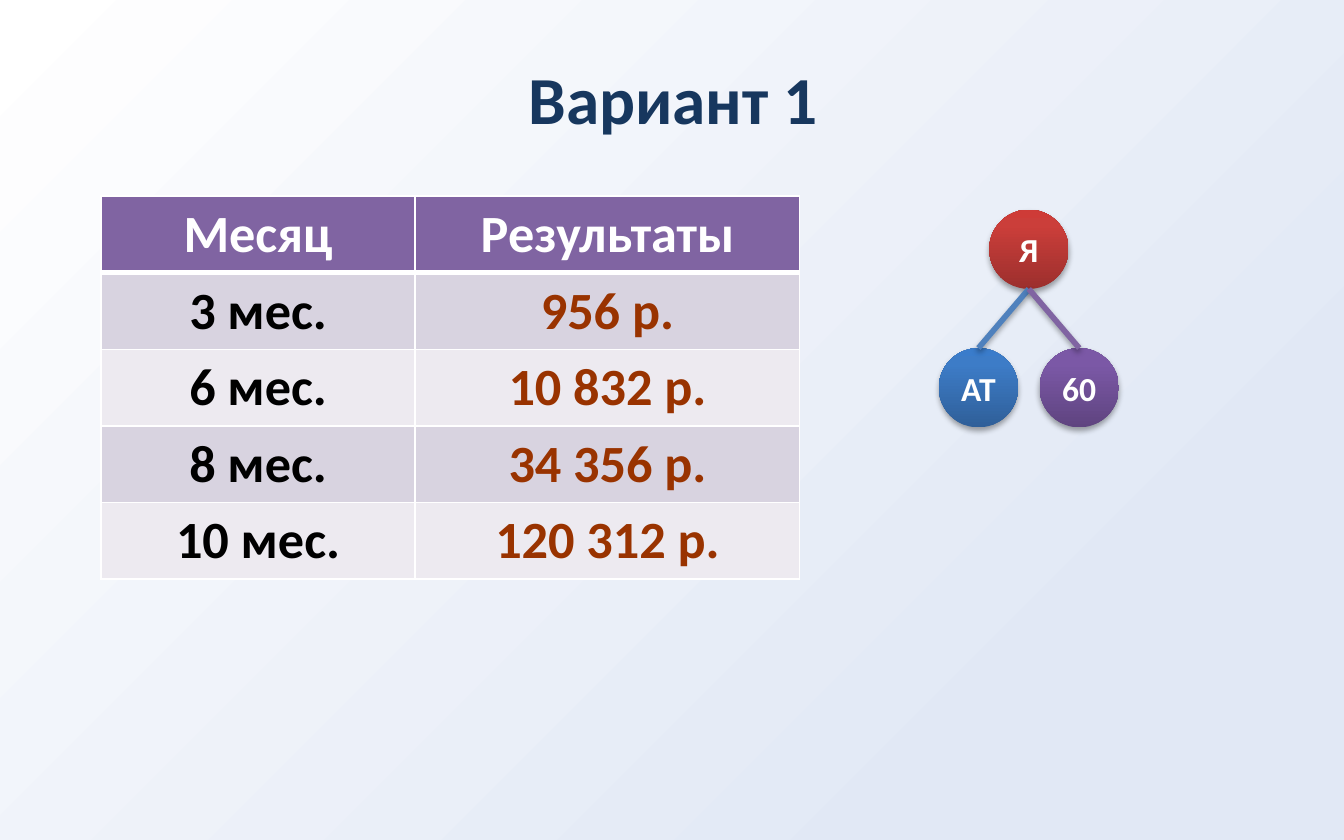
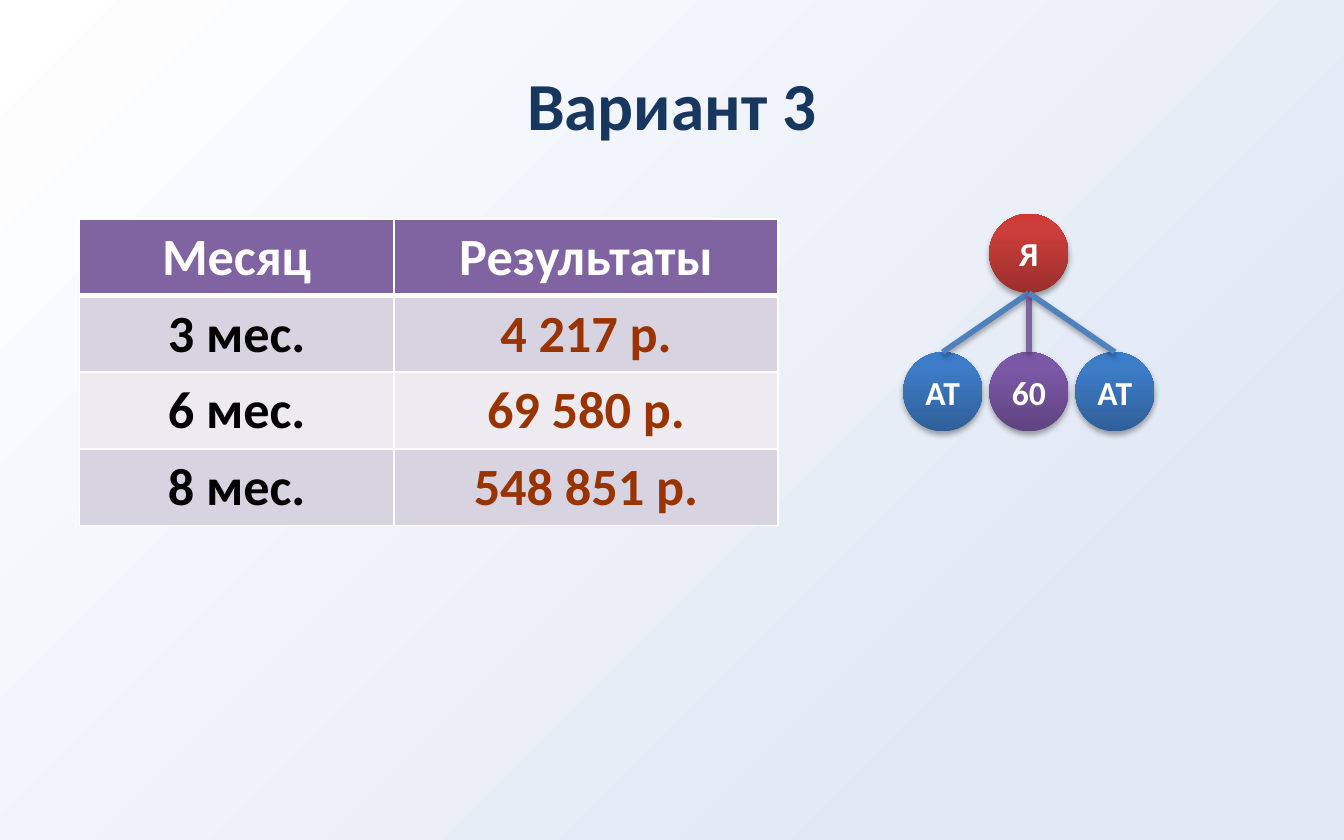
from dataclasses import dataclass

from lxml.etree import SubElement
from pptx import Presentation
from pptx.dml.color import RGBColor
from pptx.enum.shapes import MSO_CONNECTOR, MSO_SHAPE
from pptx.enum.text import MSO_ANCHOR, PP_ALIGN
from pptx.oxml.ns import qn
from pptx.util import Inches, Pt

FONT = "Calibri"
WHITE = RGBColor(0xFF, 0xFF, 0xFF)
BLACK = RGBColor(0x00, 0x00, 0x00)
NAVY = RGBColor(0x17, 0x37, 0x5E)
PALE_BLUE = RGBColor(0xE1, 0xE8, 0xF5)
BLUE = RGBColor(0x4F, 0x81, 0xBD)
PURPLE = RGBColor(0x80, 0x64, 0xA2)
RUST = RGBColor(0x99, 0x33, 0x00)
BANDS = (RGBColor(0xD8, 0xD3, 0xE0), RGBColor(0xED, 0xEA, 0xF0))
RED_SHADES = (RGBColor(0x9C, 0x2F, 0x2D), RGBColor(0xCB, 0x3E, 0x3A), RGBColor(0xCE, 0x3B, 0x37))
BLUE_SHADES = (RGBColor(0x2F, 0x5F, 0x99), RGBColor(0x3D, 0x7C, 0xC7), RGBColor(0x3A, 0x7C, 0xCB))
PURPLE_SHADES = (RGBColor(0x5F, 0x44, 0x80), RGBColor(0x7B, 0x58, 0xA6), RGBColor(0x7C, 0x57, 0xA8))

HEADER = ("Месяц", "Результаты")
COLUMN_WIDTHS = (2.34, 2.86)
ROW_HEIGHT = 0.57
BALL_SIZE = 0.59
ROOT_LEFT = 7.36
LEVEL_DROP = 1.03


@dataclass(frozen=True)
class Ball:
    """A node of the referral tree and the colour of the line leading to it."""
    label: str
    shades: tuple[RGBColor, ...]
    line: RGBColor


ME = Ball("Я", RED_SHADES, WHITE)
PARTNER = Ball("АТ", BLUE_SHADES, BLUE)
SIXTY = Ball("60", PURPLE_SHADES, PURPLE)


@dataclass(frozen=True)
class Variant:
    """The content and placement of one slide."""
    title: str
    title_left: float
    title_top: float
    table_left: float
    table_top: float
    rows: tuple[tuple[str, str], ...]
    tree_top: float
    children: tuple[Ball, ...]
    child_step: float


VARIANTS = (
    Variant(
        "Вариант 1", 0.51, 0.21, 0.75, 1.46,
        (("3 мес.", "956 р."), ("6 мес.", "10 832 р."),
         ("8 мес.", "34 356 р."), ("10 мес.", "120 312 р.")),
        1.56, (PARTNER, SIXTY), 0.75,
    ),
    Variant(
        "Вариант 3", 0.5, 0.25, 0.59, 1.63,
        (("3 мес.", "4 217 р."), ("6 мес.", "69 580 р."), ("8 мес.", "548 851 р.")),
        1.59, (PARTNER, SIXTY, PARTNER), 0.64,
    ),
)


def set_gradient(fill, root, stops, angle: int) -> None:
    """Give the fill found under root the stops (percent, colour) and a clockwise angle."""
    fill.gradient()
    gradient = root.find(".//" + qn("a:gradFill"))
    stop_list = gradient.find(qn("a:gsLst"))
    for stop in list(stop_list):
        stop_list.remove(stop)
    for percent, color in stops:
        stop = SubElement(stop_list, qn("a:gs"), pos=str(percent * 1000))
        SubElement(stop, qn("a:srgbClr"), val=str(color))
    gradient.find(qn("a:lin")).set("ang", str(angle * 60000))


def add_shadow(properties) -> None:
    """Add the soft downward shadow to shape properties."""
    effects = properties.find(qn("a:effectLst"))
    if effects is None:
        effects = SubElement(properties, qn("a:effectLst"))
    shadow = SubElement(effects, qn("a:outerShdw"), blurRad=str(Pt(3.1)), dist=str(Pt(1.8)),
                        dir="5400000", rotWithShape="0")
    color = SubElement(shadow, qn("a:srgbClr"), val=str(BLACK))
    SubElement(color, qn("a:alpha"), val="35000")


def write_text(frame, text: str, size: int, color: RGBColor) -> None:
    """Write one bold centred line."""
    para = frame.paragraphs[0]
    para.alignment = PP_ALIGN.CENTER
    span = para.add_run()
    span.text = text
    span.font.name = FONT
    span.font.size = Pt(size)
    span.font.bold = True
    span.font.color.rgb = color


def add_title(page, variant: Variant) -> None:
    """Draw the slide title."""
    box = page.shapes.add_textbox(Inches(variant.title_left), Inches(variant.title_top),
                                  Inches(9), Inches(1.04))
    box.text_frame.word_wrap = True
    box.text_frame.vertical_anchor = MSO_ANCHOR.MIDDLE
    write_text(box.text_frame, variant.title, 36, NAVY)


def set_borders(cell, top: int, bottom: int) -> None:
    """Put white borders round a cell, with top and bottom widths in points."""
    properties = cell._tc.get_or_add_tcPr()
    for side, width in (("L", 1), ("R", 1), ("T", top), ("B", bottom)):
        line = SubElement(properties, qn(f"a:ln{side}"), w=str(Pt(width)))
        SubElement(SubElement(line, qn("a:solidFill")), qn("a:srgbClr"), val=str(WHITE))


def add_results(page, variant: Variant) -> None:
    """Draw the table of results by month."""
    rows = (HEADER, *variant.rows)
    table = page.shapes.add_table(
        len(rows), len(HEADER), Inches(variant.table_left), Inches(variant.table_top),
        Inches(sum(COLUMN_WIDTHS)), Inches(ROW_HEIGHT * len(rows))).table
    table.horz_banding = False
    for column, width in zip(table.columns, COLUMN_WIDTHS):
        column.width = Inches(width)
    for row_index, row in enumerate(rows):
        is_header = row_index == 0
        colors = (WHITE, WHITE) if is_header else (BLACK, RUST)
        for column_index, text in enumerate(row):
            cell = table.cell(row_index, column_index)
            set_borders(cell, 3 if row_index == 1 else 1, 3 if is_header else 1)
            cell.fill.solid()
            cell.fill.fore_color.rgb = PURPLE if is_header else BANDS[(row_index - 1) % 2]
            write_text(cell.text_frame, text, 28, colors[column_index])


def add_ball(page, ball: Ball, left: float, top: float):
    """Draw one shaded ball with its label."""
    shape = page.shapes.add_shape(MSO_SHAPE.OVAL, Inches(left), Inches(top),
                                  Inches(BALL_SIZE), Inches(BALL_SIZE))
    set_gradient(shape.fill, shape.element.spPr, zip((0, 80, 100), ball.shades), 270)
    shape.line.fill.background()
    shape.shadow.inherit = False
    add_shadow(shape.element.spPr)
    frame = shape.text_frame
    frame.margin_left = frame.margin_right = Inches(0.04)
    frame.margin_top = frame.margin_bottom = Inches(0.05)
    frame.vertical_anchor = MSO_ANCHOR.MIDDLE
    write_text(frame, ball.label, 18, WHITE)
    return shape


def add_branch(page, parent, child, color: RGBColor) -> None:
    """Draw a line from the bottom of the parent to the top of the child."""
    start_x, start_y = parent.left + parent.width // 2, parent.top + parent.height
    branch = page.shapes.add_connector(MSO_CONNECTOR.STRAIGHT, start_x, start_y,
                                       child.left + child.width // 2, child.top)
    branch.end_connect(child, 0)
    branch.line.color.rgb = color
    branch.line.width = Pt(3)
    add_shadow(branch.element.spPr)


def add_tree(page, variant: Variant) -> None:
    """Draw the root ball, its children spread evenly below and the branches."""
    root = add_ball(page, ME, ROOT_LEFT, variant.tree_top)
    middle = (len(variant.children) - 1) / 2
    shapes = [
        add_ball(page, ball, ROOT_LEFT + (index - middle) * variant.child_step,
                 variant.tree_top + LEVEL_DROP)
        for index, ball in enumerate(variant.children)
    ]
    for ball, shape in zip(variant.children, shapes):
        add_branch(page, root, shape, ball.line)


def main() -> None:
    """Build and save the deck."""
    deck = Presentation()
    deck.slide_width, deck.slide_height = Inches(10), Inches(6.25)
    master = deck.slide_master
    set_gradient(master.background.fill, master.element, ((0, WHITE), (80, PALE_BLUE)), 45)
    for variant in VARIANTS:
        page = deck.slides.add_slide(deck.slide_layouts[6])
        add_title(page, variant)
        add_results(page, variant)
        add_tree(page, variant)
    deck.save("out.pptx")


if __name__ == "__main__":
    main()
